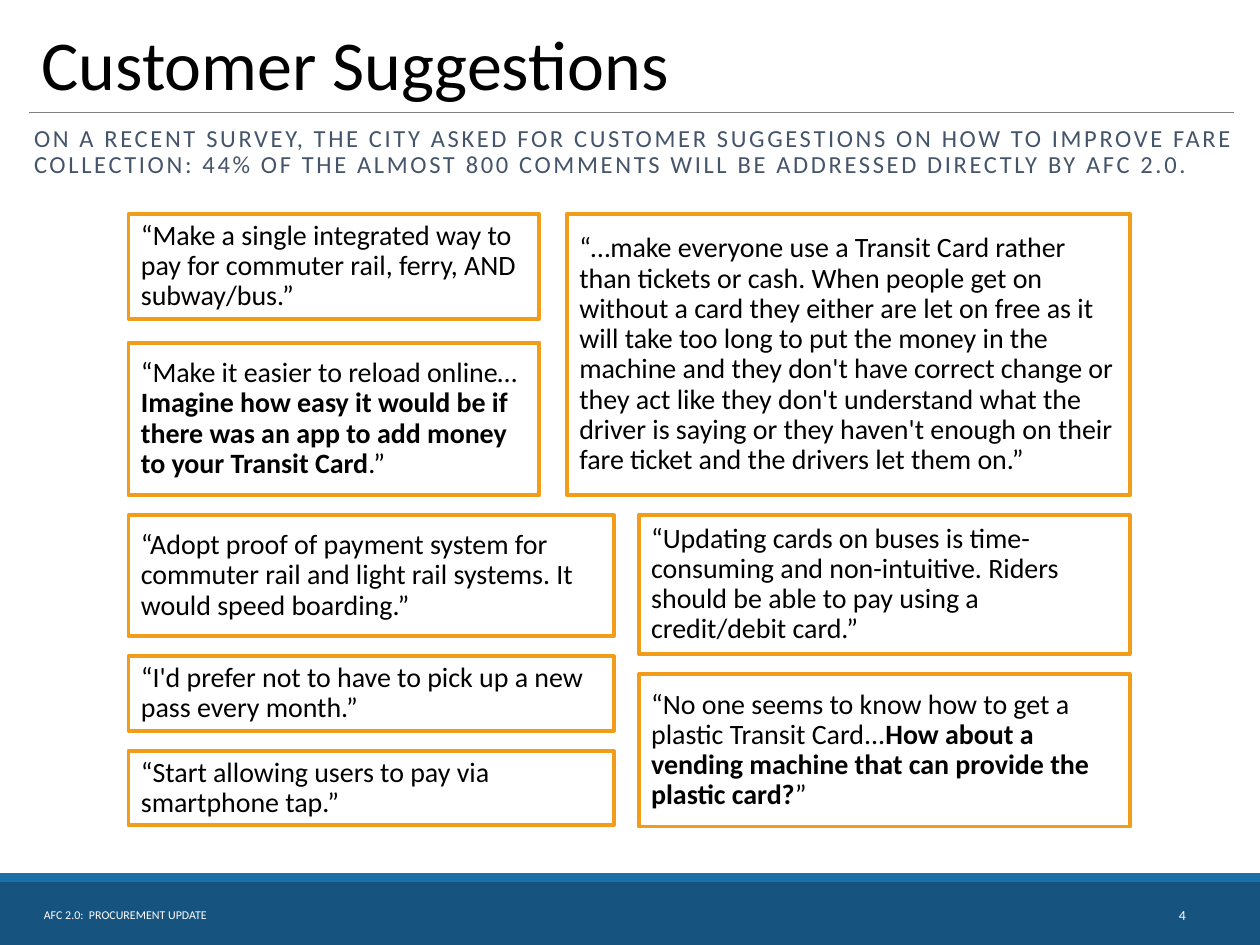
from dataclasses import dataclass

from pptx import Presentation
from pptx.dml.color import RGBColor
from pptx.enum.shapes import MSO_CONNECTOR, MSO_SHAPE
from pptx.enum.text import MSO_ANCHOR, MSO_AUTO_SIZE, PP_ALIGN
from pptx.oxml.ns import qn
from pptx.util import Inches, Pt


@dataclass(frozen=True)
class Theme:
    """Colours, font and type sizes of the deck."""
    font: str = "Calibri"
    ink: str = "000000"
    muted: str = "44546A"
    light: str = "FFFFFF"
    rule: str = "808080"
    accent: str = "F19D19"
    footer: str = "16537F"
    footer_edge: str = "1D6FA9"
    title_size: float = 40
    subtitle_size: float = 14
    quote_size: float = 16
    footer_size: float = 6.8
    number_size: float = 7.9


def write_text(shape, text, *, font, size, color, align=PP_ALIGN.LEFT,
               anchor=MSO_ANCHOR.MIDDLE, line_spacing=1.0, space_before=0, tracking=0):
    """Fill a shape with one paragraph, setting parts between ** marks in bold."""
    frame = shape.text_frame
    frame.word_wrap = True
    frame.auto_size = MSO_AUTO_SIZE.NONE
    frame.vertical_anchor = anchor
    paragraph = frame.paragraphs[0]
    paragraph.alignment = align
    paragraph.line_spacing = line_spacing
    paragraph.space_before = Pt(space_before)
    for index, part in enumerate(text.split("**")):
        run = paragraph.add_run()
        run.text = part
        run.font.name = font
        run.font.size = Pt(size)
        run.font.bold = index % 2 == 1
        run.font.color.rgb = RGBColor.from_string(color)
        if tracking:
            run._r.get_or_add_rPr().set("spc", str(round(tracking * 100)))
    return paragraph


class SlideBuilder:
    """Draws styled elements on the current slide, on a grid of 100 columns by 75 rows."""

    columns, rows = 100, 75

    def __init__(self, presentation, theme):
        """Add a title and content slide to the presentation."""
        self.presentation = presentation
        self.theme = theme
        self.slide = presentation.slides.add_slide(presentation.slide_layouts[1])

    def box(self, left, top, width, height):
        """Turn grid columns and rows into slide lengths."""
        column = self.presentation.slide_width / self.columns
        row = self.presentation.slide_height / self.rows
        return round(left * column), round(top * row), round(width * column), round(height * row)

    def place(self, shape, *area):
        """Move a shape to a grid area."""
        shape.left, shape.top, shape.width, shape.height = self.box(*area)

    def rectangle(self, *area, fill=None, line=None):
        """Add a rectangle with an optional fill and outline."""
        shape = self.slide.shapes.add_shape(MSO_SHAPE.RECTANGLE, *self.box(*area))
        shape.shadow.inherit = False
        if fill:
            shape.fill.solid()
            shape.fill.fore_color.rgb = RGBColor.from_string(fill)
        else:
            shape.fill.background()
        if line:
            shape.line.color.rgb = RGBColor.from_string(line)
            shape.line.width = Pt(2.25)
        else:
            shape.line.fill.background()
        return shape

    def rule(self, left, top, width):
        """Add a thin horizontal line."""
        x, y, length, _ = self.box(left, top, width, 0)
        connector = self.slide.shapes.add_connector(MSO_CONNECTOR.STRAIGHT, x, y, x + length, y)
        connector.line.color.rgb = RGBColor.from_string(self.theme.rule)
        connector.line.width = Pt(0.5)
        properties = connector._element.spPr
        properties.append(properties.makeelement(qn("a:effectLst"), {}))

    def title(self, text, *area):
        """Fill and place the title placeholder."""
        shape = self.slide.shapes.title
        self.place(shape, *area)
        write_text(shape, text, font=self.theme.font, size=self.theme.title_size,
                   color=self.theme.ink, anchor=MSO_ANCHOR.BOTTOM, line_spacing=0.9)

    def subtitle(self, text, *area):
        """Fill and place the body placeholder as unbulleted, tracked text."""
        shape = self.slide.placeholders[1]
        self.place(shape, *area)
        paragraph = write_text(shape, text, font=self.theme.font, size=self.theme.subtitle_size,
                               color=self.theme.muted, anchor=MSO_ANCHOR.TOP,
                               line_spacing=0.9, space_before=10, tracking=1.5)
        properties = paragraph._p.get_or_add_pPr()
        properties.set("marL", "0")
        properties.set("indent", "0")
        properties.append(properties.makeelement(qn("a:buNone"), {}))

    def label(self, text, *area, size, align=PP_ALIGN.LEFT):
        """Add a small light text for the footer."""
        shape = self.slide.shapes.add_textbox(*self.box(*area))
        write_text(shape, text, font=self.theme.font, size=size,
                   color=self.theme.light, align=align)

    def quote_stack(self, left, top, width, gap, quotes):
        """Stack outlined quotes of given heights with an equal gap."""
        for height, text in quotes:
            shape = self.rectangle(left, top, width, height, line=self.theme.accent)
            write_text(shape, text, font=self.theme.font, size=self.theme.quote_size,
                       color=self.theme.ink, line_spacing=0.9, space_before=10)
            top += height + gap


UPPER_LEFT = [
    (8.3, "“Make a single integrated way to pay for commuter rail, ferry, AND subway/bus.”"),
    (12.1, "“Make it easier to reload online…**Imagine how easy it would be if there was an app "
           "to add money to your Transit Card**.”"),
]
UPPER_RIGHT = [
    (22.3, "“…make everyone use a Transit Card rather than tickets or cash. When people get on "
           "without a card they either are let on free as it will take too long to put the money "
           "in the machine and they don't have correct change or they act like they don't "
           "understand what the driver is saying or they haven't enough on their fare ticket and "
           "the drivers let them on.”"),
]
LOWER_LEFT = [
    (9.6, "“Adopt proof of payment system for commuter rail and light rail systems. "
          "It would speed boarding.”"),
    (5.9, "“I'd prefer not to have to pick up a new pass every month.”"),
    (5.9, "“Start allowing users to pay via smartphone tap.”"),
]
LOWER_RIGHT = [
    (11, "“Updating cards on buses is time-consuming and non-intuitive. Riders should be able "
         "to pay using a credit/debit card.”"),
    (12.1, "“No one seems to know how to get a plastic Transit Card...**How about a vending "
           "machine that can provide the plastic card?**”"),
]


def main():
    """Build the customer suggestions slide."""
    presentation = Presentation()
    presentation.slide_width, presentation.slide_height = Inches(10), Inches(7.5)
    theme = Theme()
    builder = SlideBuilder(presentation, theme)

    builder.rectangle(0, 70, 100, 5, fill=theme.footer)
    builder.rectangle(0, 69.3, 100, 0.7, fill=theme.footer_edge)
    builder.rule(2.3, 8.9, 95.6)
    builder.title("Customer Suggestions", 2.3, 0, 95.6, 8.9)
    builder.subtitle("ON A RECENT SURVEY, THE CITY ASKED FOR CUSTOMER SUGGESTIONS ON HOW TO "
                     "IMPROVE FARE COLLECTION: 44% OF THE ALMOST 800 COMMENTS WILL BE ADDRESSED "
                     "DIRECTLY BY AFC 2.0.", 1.7, 9.5, 97.8, 5.1)
    builder.label("AFC 2.0:  PROCUREMENT UPDATE", 2.5, 70.6, 39.6, 4, size=theme.footer_size)
    builder.label("4", 84.3, 70.6, 10.8, 4, size=theme.number_size, align=PP_ALIGN.RIGHT)

    left, right, upper, lower = 10.2, 89.7, 17, 40.9
    builder.quote_stack(left, upper, 32.6, 1.9, UPPER_LEFT)
    builder.quote_stack(right - 44.7, upper, 44.7, 0, UPPER_RIGHT)
    builder.quote_stack(left, lower, 38.5, 1.6, LOWER_LEFT)
    builder.quote_stack(right - 39, lower, 39, 1.6, LOWER_RIGHT)
    presentation.save("out.pptx")


if __name__ == "__main__":
    main()
